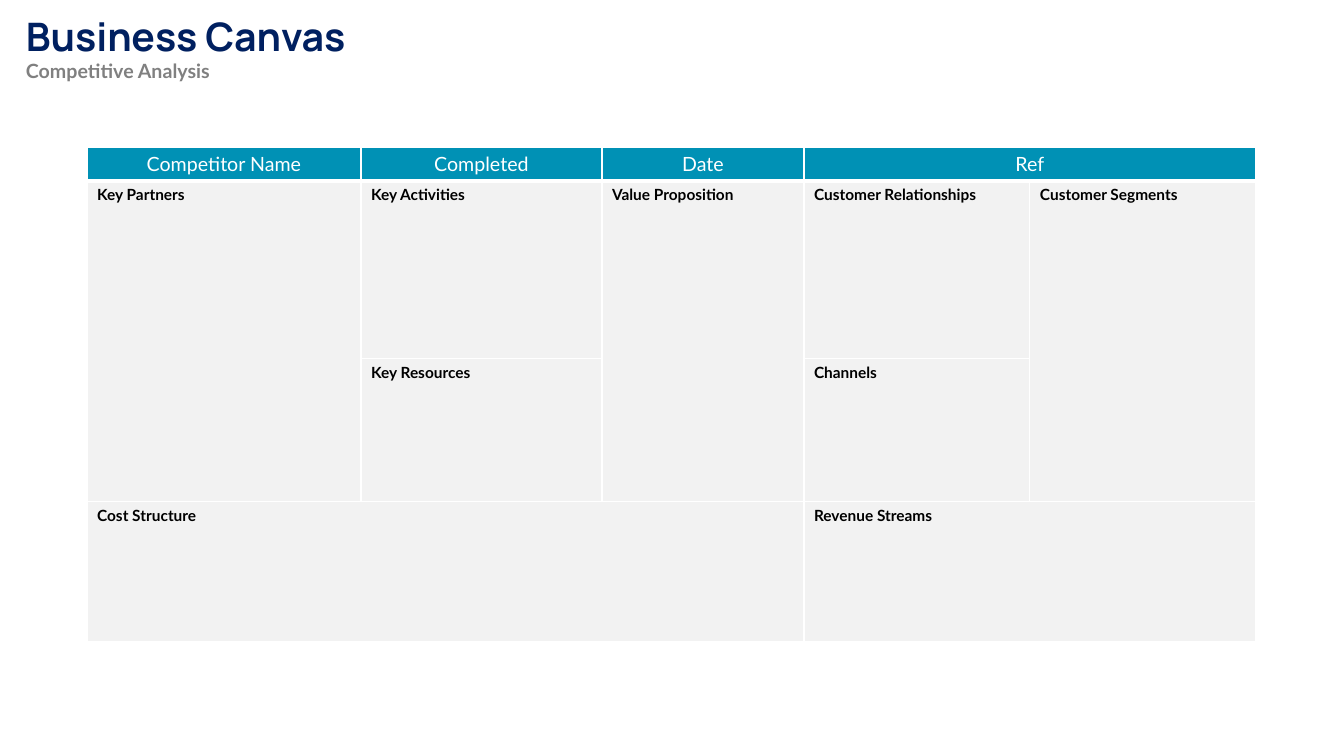
from dataclasses import dataclass

import pptx
import pptx.dml.color
import pptx.enum.text
import pptx.oxml
import pptx.oxml.ns
import pptx.util

EMU_PER_PX = 914400 / 100.8


@dataclass(frozen=True)
class Theme:
    heading_font: str = "Manrope"
    body_font: str = "Lato"
    navy: str = "002060"
    grey: str = "808080"
    teal: str = "0091B5"
    panel: str = "F2F2F2"
    white: str = "FFFFFF"
    black: str = "000000"
    title_size: int = 28
    header_size: int = 14
    label_size: int = 11
    thin_border: int = 1
    thick_border: int = 3


THEME = Theme()

COLUMN_WIDTHS = (274, 241, 202, 226, 226)
ROW_HEIGHTS = (33, 178, 143, 140)

# text, row, column, rows spanned, columns spanned
HEADERS = (
    ("Competitor Name", 0, 0, 1, 1),
    ("Completed", 0, 1, 1, 1),
    ("Date", 0, 2, 1, 1),
    ("Ref", 0, 3, 1, 2),
)
BLOCKS = (
    ("Key Partners", 1, 0, 2, 1),
    ("Key Activities", 1, 1, 1, 1),
    ("Value Proposition", 1, 2, 2, 1),
    ("Customer Relationships", 1, 3, 1, 1),
    ("Customer Segments", 1, 4, 2, 1),
    ("Key Resources", 2, 1, 1, 1),
    ("Channels", 2, 3, 1, 1),
    ("Cost Structure", 3, 0, 1, 3),
    ("Revenue Streams", 3, 3, 1, 2),
)


def px(length):
    return pptx.util.Emu(round(length * EMU_PER_PX))


def rgb(color):
    return pptx.dml.color.RGBColor.from_string(color)


def add_run(paragraph, text, font_name, size, color, bold):
    run = paragraph.add_run()
    run.text = text
    run.font.name = font_name
    run.font.size = pptx.util.Pt(size)
    run.font.color.rgb = rgb(color)
    run.font.bold = bold


def add_heading(slide, title, subtitle):
    box = slide.shapes.add_textbox(px(16), px(7), px(1209), px(82))
    frame = box.text_frame
    frame.word_wrap = True
    frame.auto_size = pptx.enum.text.MSO_AUTO_SIZE.SHAPE_TO_FIT_TEXT
    add_run(frame.paragraphs[0], title, THEME.heading_font, THEME.title_size, THEME.navy, True)
    add_run(frame.add_paragraph(), subtitle, THEME.body_font, THEME.header_size, THEME.grey, True)


def style_cell(cell, fill, bottom_border):
    """Fill the cell and draw its four white borders, which precede the fill in XML."""
    cell.fill.solid()
    cell.fill.fore_color.rgb = rgb(fill)
    properties = cell._tc.get_or_add_tcPr()
    for index, side in enumerate("LRTB"):
        width = pptx.util.Pt(bottom_border if side == "B" else THEME.thin_border)
        border = pptx.oxml.parse_xml(
            f'<a:ln{side} {pptx.oxml.ns.nsdecls("a")} w="{width}">'
            f'<a:solidFill><a:srgbClr val="{THEME.white}"/></a:solidFill></a:ln{side}>'
        )
        properties.insert(index, border)


def add_canvas_table(slide):
    frame = slide.shapes.add_table(
        len(ROW_HEIGHTS), len(COLUMN_WIDTHS),
        px(87), px(147), px(sum(COLUMN_WIDTHS)), px(sum(ROW_HEIGHTS)),
    )
    table = frame.table
    table.first_row = False
    table.horz_banding = False
    for column, width in zip(table.columns, COLUMN_WIDTHS):
        column.width = px(width)
    for index, (row, height) in enumerate(zip(table.rows, ROW_HEIGHTS)):
        row.height = px(height)
        is_header = index == 0
        for cell in row.cells:
            style_cell(
                cell,
                THEME.teal if is_header else THEME.panel,
                THEME.thick_border if is_header else THEME.thin_border,
            )
    return table


def fill_block(table, block, size, color, bold, alignment):
    text, row, column, row_span, column_span = block
    cell = table.cell(row, column)
    if row_span * column_span > 1:
        cell.merge(table.cell(row + row_span - 1, column + column_span - 1))
    paragraph = cell.text_frame.paragraphs[0]
    paragraph.alignment = alignment
    add_run(paragraph, text, THEME.body_font, size, color, bold)


def main():
    presentation = pptx.Presentation()
    presentation.slide_width = px(1344)
    presentation.slide_height = px(756)
    slide = presentation.slides.add_slide(presentation.slide_layouts[6])

    table = add_canvas_table(slide)
    align = pptx.enum.text.PP_ALIGN
    for header in HEADERS:
        fill_block(table, header, THEME.header_size, THEME.white, False, align.CENTER)
    for block in BLOCKS:
        fill_block(table, block, THEME.label_size, THEME.black, True, align.LEFT)
    add_heading(slide, "Business Canvas", "Competitive Analysis")

    presentation.save("out.pptx")


if __name__ == "__main__":
    main()
